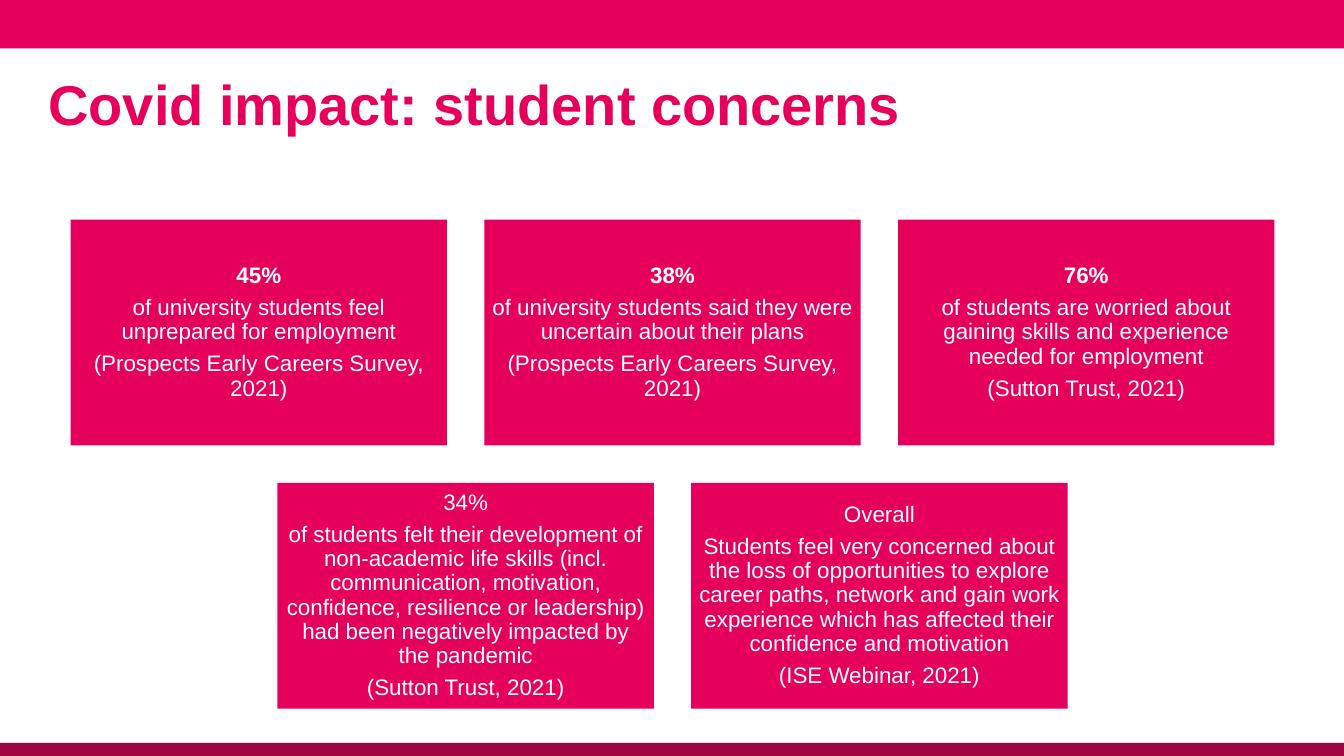
from dataclasses import dataclass

from pptx import Presentation
from pptx.dml.color import RGBColor
from pptx.enum.shapes import MSO_SHAPE
from pptx.enum.text import MSO_ANCHOR, PP_ALIGN
from pptx.util import Inches, Pt

RECT = MSO_SHAPE.RECTANGLE
MIDDLE = MSO_ANCHOR.MIDDLE
CENTER = PP_ALIGN.CENTER


@dataclass(frozen=True)
class Theme:
    font: str = "Arial"
    pink: RGBColor = RGBColor(0xE6, 0x00, 0x5B)
    card: RGBColor = RGBColor(0xE5, 0x00, 0x5B)
    dark: RGBColor = RGBColor(0x9E, 0x04, 0x3D)
    white: RGBColor = RGBColor(0xFF, 0xFF, 0xFF)
    title_size: int = 40
    card_size: int = 16


THEME = Theme()
SLIDE_W, SLIDE_H = 13.33, 7.5

# Each card: heading, statement, source, bold heading
CARD_ROWS = [
    [
        ("45%", "of university students feel unprepared for employment",
         "(Prospects Early Careers Survey, 2021)", True),
        ("38%", "of university students said they were uncertain about their plans",
         "(Prospects Early Careers Survey, 2021)", True),
        ("76%", "of students are worried about gaining skills and experience "
         "needed for employment", "(Sutton Trust, 2021)", True),
    ],
    [
        ("34%", "of students felt their development of non-academic life skills "
         "(incl. communication, motivation, confidence, resilience or leadership) "
         "had been negatively impacted by the pandemic",
         "(Sutton Trust, 2021)", False),
        ("Overall", "Students feel very concerned about the loss of opportunities "
         "to explore career paths, network and gain work experience which has "
         "affected their confidence and motivation", "(ISE Webinar, 2021)", False),
    ],
]


def style_run(r, size, color, bold):
    r.font.name = THEME.font
    r.font.size = Pt(size)
    r.font.bold = bold
    r.font.color.rgb = color


def set_insets(tf, left, top, right, bottom):
    tf.margin_left, tf.margin_top = Inches(left), Inches(top)
    tf.margin_right, tf.margin_bottom = Inches(right), Inches(bottom)


def add_block(s, x, y, w, h, color):
    sp = s.shapes.add_shape(RECT, Inches(x), Inches(y), Inches(w), Inches(h))
    sp.shadow.inherit = False
    sp.fill.solid()
    sp.fill.fore_color.rgb = color
    sp.line.fill.background()
    return sp


def add_title(s, x, y, w, h, text):
    sp = s.shapes.add_textbox(Inches(x), Inches(y), Inches(w), Inches(h))
    tf = sp.text_frame
    tf.word_wrap = True
    tf.vertical_anchor = MIDDLE
    set_insets(tf, 0, 0.05, 0.1, 0.05)
    tf.text = text
    style_run(tf.paragraphs[0].runs[0], THEME.title_size, THEME.pink, True)


def add_card(s, x, y, w, h, card):
    *lines, bold_heading = card
    tf = add_block(s, x, y, w, h, THEME.card).text_frame
    tf.word_wrap = True
    tf.vertical_anchor = MIDDLE
    set_insets(tf, 0.07, 0.07, 0.07, 0.07)
    tf.text = "\n".join(lines)
    for i, p in enumerate(tf.paragraphs):
        p.alignment = CENTER
        p.line_spacing = 0.9
        p.space_after = Pt(0.35 * THEME.card_size)
        style_run(p.runs[0], THEME.card_size, THEME.white,
                  bold_heading and i == 0)


def add_card_grid(s, x, y, w, h, rows):
    """Equal cards in rows, each row centred in the box."""
    gap = 0.37
    most = max(len(row) for row in rows)
    card_w = (w - gap * (most - 1)) / most
    card_h = (h - gap * (len(rows) - 1)) / len(rows)
    for i, row in enumerate(rows):
        row_w = len(row) * (card_w + gap) - gap
        left = x + (w - row_w) / 2
        for j, card in enumerate(row):
            add_card(s, left + j * (card_w + gap), y + i * (card_h + gap),
                     card_w, card_h, card)


def main():
    prs = Presentation()
    prs.slide_width, prs.slide_height = Inches(SLIDE_W), Inches(SLIDE_H)
    s = prs.slides.add_slide(prs.slide_layouts[6])

    # Bands along the top and bottom edges
    add_block(s, 0, 0, SLIDE_W, 0.48, THEME.pink)
    add_block(s, 0, 7.37, SLIDE_W, SLIDE_H - 7.37, THEME.dark)

    # Heading and cards
    add_title(s, 0.48, 0.47, 12.36, 1.1, "Covid impact: student concerns")
    add_card_grid(s, 0.7, 2.18, 11.94, 4.85, CARD_ROWS)

    prs.save("out.pptx")


if __name__ == "__main__":
    main()
